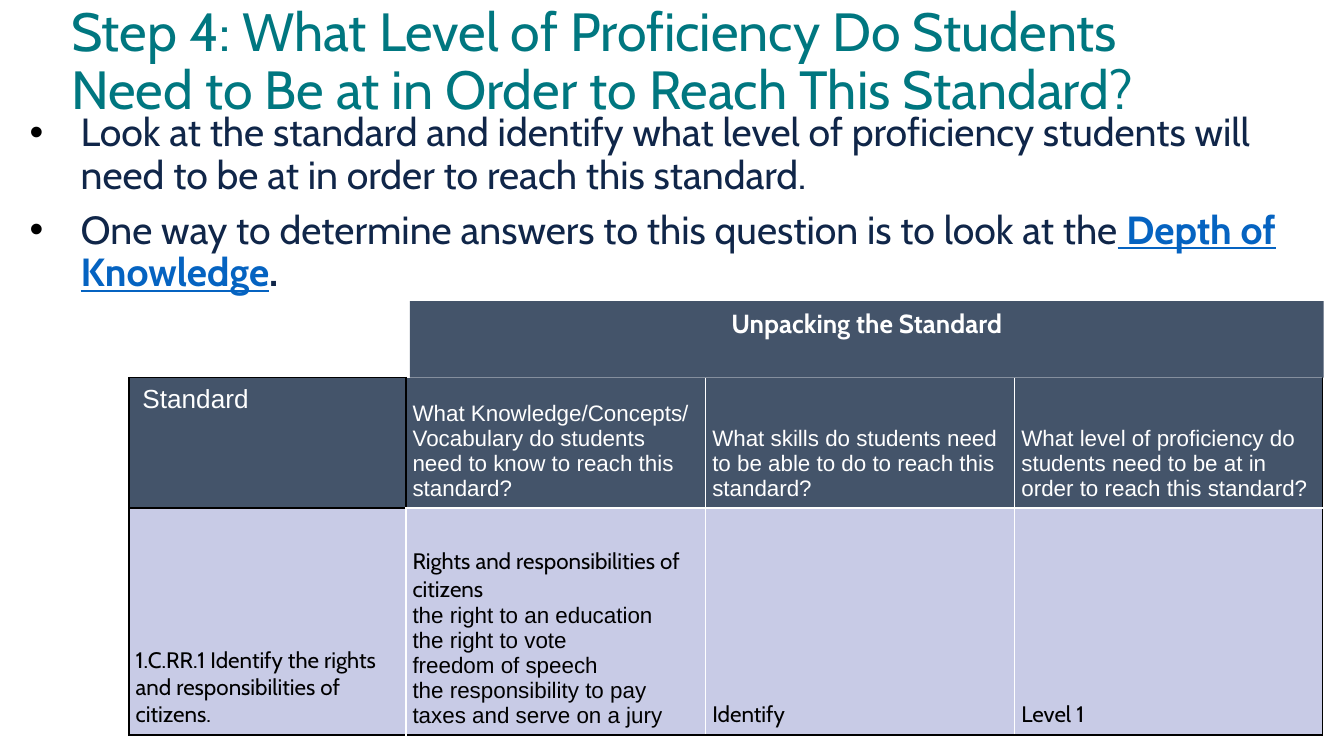
from lxml import etree
from pptx import Presentation
from pptx import util as u
from pptx.dml import color as dc
from pptx.enum import shapes, text
from pptx.oxml import ns

COLORS = {"teal": "007780", "navy": "102649", "link": "0563C1", "slate": "44546A",
          "lilac": "C8CBE6", "white": "FFFFFF", "black": "000000"}
TITLE = "Step 4: What Level of Proficiency Do Students Need to Be at in Order to Reach This Standard?"
BULLETS = [
    [("Look at the standard and identify what level of proficiency students will need to be at "
      "in order to reach this standard.", "navy", False, False)],
    [("One way to determine answers to this question is to look at the", "navy", False, False),
     (" ", "link", False, True),
     ("Depth of Knowledge", "link", True, True),
     (".", "navy", True, False)],
]
BANNER = "Unpacking the Standard"
COLS = [2.06, 2.23, 2.3, 2.29]
ROWS = [0.97, 1.69]
HEADERS = [
    "Standard",
    "What Knowledge/Concepts/ Vocabulary do students need to know to reach this standard?",
    "What skills do students need to be able to do to reach this standard?",
    "What level of proficiency do students need to be at in order to reach this standard?",
]
ANSWERS = [
    [("1.C.RR.1 Identify the rights and responsibilities of citizens.", "Cabin")],
    [("Rights and responsibilities of citizens", "Cabin"),
     ("the right to an education", "Arial"),
     ("the right to vote", "Arial"),
     ("freedom of speech", "Arial"),
     ("the responsibility to pay taxes and serve on a jury ", "Arial")],
    [("Identify", "Cabin")],
    [("Level 1", "Cabin")],
]


def rgb(name):
    return dc.RGBColor.from_string(COLORS[name])


def add_run(p, content, size, color, font="Cabin", bold=False, underline=False):
    r = p.add_run()
    r.text = content
    r.font.size, r.font.name = u.Pt(size), font
    r.font.bold, r.font.underline = bold, underline
    r.font.color.rgb = rgb(color)


def set_frame(tf, x, y):
    tf.word_wrap = True
    tf.auto_size = text.MSO_AUTO_SIZE.NONE
    tf.vertical_anchor = text.MSO_ANCHOR.TOP
    tf.margin_left = tf.margin_right = u.Inches(x)
    tf.margin_top = tf.margin_bottom = u.Inches(y)


def add_bullet(p):
    pPr = p._p.get_or_add_pPr()
    pPr.set("marL", str(u.Inches(0.38)))
    pPr.set("indent", str(-u.Inches(0.38)))
    color = etree.SubElement(pPr, ns.qn("a:buClr"))
    etree.SubElement(color, ns.qn("a:srgbClr"), val=COLORS["black"])
    etree.SubElement(pPr, ns.qn("a:buFont"), typeface="Arial")
    etree.SubElement(pPr, ns.qn("a:buChar"), char="•")


def set_borders(cell, row, col):
    corner = (row, col) == (0, 0)
    black = {
        "L": col == 0 or (row, col) == (0, 1),
        "R": corner or col == len(COLS) - 1,
        "T": corner or (row, col) == (1, 0),
        "B": corner or row == len(ROWS) - 1,
    }
    tcPr = cell._tc.get_or_add_tcPr()
    for side, dark in black.items():
        ln = etree.SubElement(tcPr, ns.qn("a:ln" + side), w=str(u.Pt(1)))
        fill = etree.SubElement(ln, ns.qn("a:solidFill"))
        etree.SubElement(fill, ns.qn("a:srgbClr"), val=COLORS["black" if dark else "white"])


prs = Presentation()
prs.slide_width = u.Inches(10)
prs.slide_height = prs.slide_width * 9 // 16
s = prs.slides.add_slide(prs.slide_layouts[5])

title = s.shapes.title
title.left, title.top, title.width, title.height = map(u.Inches, (0.46, 0, 8.84, 1.08))
set_frame(title.text_frame, 0.07, 0.04)
p = title.text_frame.paragraphs[0]
p.alignment, p.line_spacing = text.PP_ALIGN.LEFT, 0.9
add_run(p, TITLE, 28.8, "teal")

body = s.shapes.add_textbox(*map(u.Inches, (0.15, 0.8, 9.68, 4.02)))
tf = body.text_frame
set_frame(tf, 0.07, 0.04)
for i, runs in enumerate(BULLETS):
    p = tf.add_paragraph() if i else tf.paragraphs[0]
    add_bullet(p)
    p.line_spacing = 0.9
    if i:
        p.space_before = u.Pt(7)
    for content, color, bold, underline in runs:
        add_run(p, content, 21, color, bold=bold, underline=underline)

frame = s.shapes.add_table(len(ROWS), len(COLS), u.Inches(0.96), u.Inches(2.81),
                           u.Inches(sum(COLS)), u.Inches(sum(ROWS)))
table = frame.table
for column, width in zip(table.columns, COLS):
    column.width = u.Inches(width)
for row, height in zip(table.rows, ROWS):
    row.height = u.Inches(height)

grid = [[[(header, "Arial")] for header in HEADERS], ANSWERS]
for i, cells in enumerate(grid):
    for j, lines in enumerate(cells):
        cell = table.cell(i, j)
        corner = (i, j) == (0, 0)
        set_borders(cell, i, j)
        cell.fill.solid()
        cell.fill.fore_color.rgb = rgb("lilac" if i else "slate")
        cell.vertical_anchor = text.MSO_ANCHOR.TOP if corner else text.MSO_ANCHOR.BOTTOM
        cell.margin_left = cell.margin_right = u.Inches(0.1 if corner else 0.05)
        cell.margin_top = cell.margin_bottom = u.Inches(0.05)
        for k, (content, font) in enumerate(lines):
            p = cell.text_frame.add_paragraph() if k else cell.text_frame.paragraphs[0]
            add_run(p, content, 14 if corner else 12, "black" if i else "white", font)

banner = s.shapes.add_shape(shapes.MSO_SHAPE.RECTANGLE, *map(u.Inches, (3.05, 2.24, 6.8, 0.57)))
banner.shadow.inherit = False
banner.fill.solid()
banner.fill.fore_color.rgb = rgb("slate")
banner.line.fill.background()
set_frame(banner.text_frame, 0.1, 0.05)
p = banner.text_frame.paragraphs[0]
p.alignment = text.PP_ALIGN.CENTER
add_run(p, BANNER, 14, "white", bold=True)

prs.save("out.pptx")
